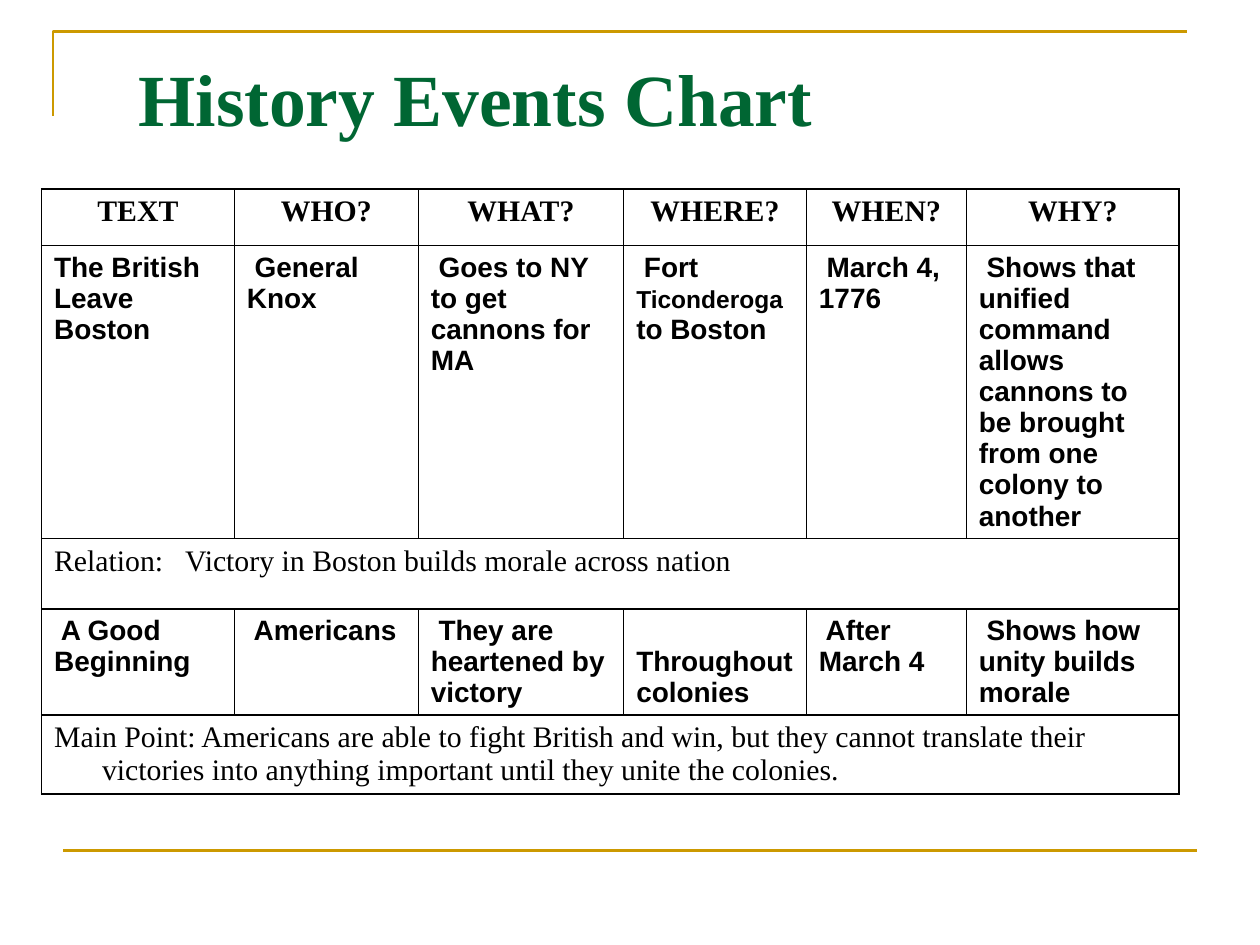
import pptx
import pptx.util
import pptx.dml.color
import pptx.enum.shapes
import pptx.enum.text
import pptx.oxml
import pptx.oxml.ns
from lxml import etree

Inches, Pt = pptx.util.Inches, pptx.util.Pt
RGB = pptx.dml.color.RGBColor.from_string
ALIGN = pptx.enum.text.PP_ALIGN

TITLE = "History Events Chart"
# A one-item row spans the whole table; a tuple cell is a list of (text, style) runs.
ROWS = [
    ["TEXT", "WHO?", "WHAT?", "WHERE?", "WHEN?", "WHY?"],
    ["The British Leave Boston", " General Knox",
     " Goes to NY to get cannons for MA",
     ((" Fort ", "event"), ("Ticonderoga", "small"), (" to Boston", "event")),
     " March 4, 1776",
     " Shows that unified command allows cannons to be brought from one colony to another"],
    ["Relation:   Victory in Boston builds morale across nation"],
    [" A Good Beginning", " Americans", " They are heartened by victory",
     " Throughout colonies", " After March 4", " Shows how unity builds morale"],
    ["Main Point: Americans are able to fight British and win, but they cannot "
     "translate their victories into anything important until they unite the colonies."],
]
ROW_STYLES = ["head", "event", "note", "event", "note"]
COL_WIDTHS = [1.53, 1.46, 1.63, 1.45, 1.27, 1.69]
ROW_HEIGHTS = [0.45, 2.32, 0.56, 0.84, 0.63]
TABLE_LEFT, TABLE_TOP = 0.33, 1.5
HANGING = 0.38

SERIF, SANS = "Times New Roman", "Arial"
THEME = {
    "accent": "CC9900", "border": "000000", "rule_width": 1.5, "border_width": 1,
    "text": {
        "title": ({"name": SERIF, "size": Pt(42), "bold": True}, "006633"),
        "head": ({"name": SERIF, "size": Pt(17), "bold": True}, "000000"),
        "event": ({"name": SANS, "size": Pt(16), "bold": True}, "000000"),
        "small": ({"name": SANS, "size": Pt(14), "bold": True}, "000000"),
        "note": ({"name": SERIF, "size": Pt(17), "bold": False}, "000000"),
    },
}


def add_run(p, text, style):
    r = p.add_run()
    r.text = text
    formats, color = THEME["text"][style]
    for name, value in formats.items():
        setattr(r.font, name, value)
    r.font.color.rgb = RGB(color)


def style_rule(shape):
    shape.line.color.rgb = RGB(THEME["accent"])
    shape.line.width = Pt(THEME["rule_width"])


def add_frame(s):
    """Draw the corner bracket at the top and the rule at the bottom."""
    builder = s.shapes.build_freeform(Inches(0.42), Inches(0.92))
    builder.add_line_segments(
        [(Inches(0.42), Inches(0.25)), (Inches(9.42), Inches(0.25))], close=False)
    bracket = builder.convert_to_shape()
    bracket.fill.background()
    bracket.shadow.inherit = False
    style_rule(bracket)
    rule = s.shapes.add_connector(
        pptx.enum.shapes.MSO_CONNECTOR.STRAIGHT,
        Inches(0.5), Inches(6.75), Inches(9.5), Inches(6.75))
    style_rule(rule)
    etree.SubElement(rule._element.spPr, pptx.oxml.ns.qn("a:effectLst"))


def add_borders(cell):
    tc_pr = cell._tc.get_or_add_tcPr()
    for i, side in enumerate(("lnL", "lnR", "lnT", "lnB")):
        tc_pr.insert(i, pptx.oxml.parse_xml(
            f'<a:{side} {pptx.oxml.ns.nsdecls("a")} w="{Pt(THEME["border_width"])}">'
            f'<a:solidFill><a:srgbClr val="{THEME["border"]}"/></a:solidFill></a:{side}>'))


def fill_cell(cell, content, style):
    p = cell.text_frame.paragraphs[0]
    p.alignment = ALIGN.CENTER if style == "head" else ALIGN.LEFT
    if style != "event":
        p_pr = p._p.get_or_add_pPr()
        p_pr.set("marL", str(Inches(HANGING)))
        p_pr.set("indent", str(-Inches(HANGING)))
    runs = ((content, style),) if isinstance(content, str) else content
    for text, run_style in runs:
        add_run(p, text, run_style)


def add_events_table(s):
    table = s.shapes.add_table(
        len(ROWS), len(COL_WIDTHS), Inches(TABLE_LEFT), Inches(TABLE_TOP),
        Inches(sum(COL_WIDTHS)), Inches(sum(ROW_HEIGHTS))).table
    table.first_row = table.horz_banding = False
    for column, width in zip(table.columns, COL_WIDTHS):
        column.width = Inches(width)
    for row, height in zip(table.rows, ROW_HEIGHTS):
        row.height = Inches(height)
    for cell in table.iter_cells():
        cell.fill.background()
        add_borders(cell)
    for i, (contents, style) in enumerate(zip(ROWS, ROW_STYLES)):
        if len(contents) == 1:
            table.cell(i, 0).merge(table.cell(i, len(COL_WIDTHS) - 1))
        for j, content in enumerate(contents):
            fill_cell(table.cell(i, j), content, style)


def add_title(s):
    title = s.shapes.title
    title.left, title.top = Inches(1), Inches(0.3)
    title.width, title.height = Inches(8.5), Inches(1.01)
    tf = title.text_frame
    tf.vertical_anchor = pptx.enum.text.MSO_ANCHOR.TOP
    tf.margin_top = Inches(0.12)
    p = tf.paragraphs[0]
    p.alignment = ALIGN.LEFT
    add_run(p, TITLE, "title")


def main():
    prs = pptx.Presentation()
    prs.slide_width, prs.slide_height = Inches(10), Inches(7.5)
    s = prs.slides.add_slide(prs.slide_layouts.get_by_name("Title Only"))
    add_frame(s)
    add_title(s)
    add_events_table(s)
    prs.save("out.pptx")


if __name__ == "__main__":
    main()
